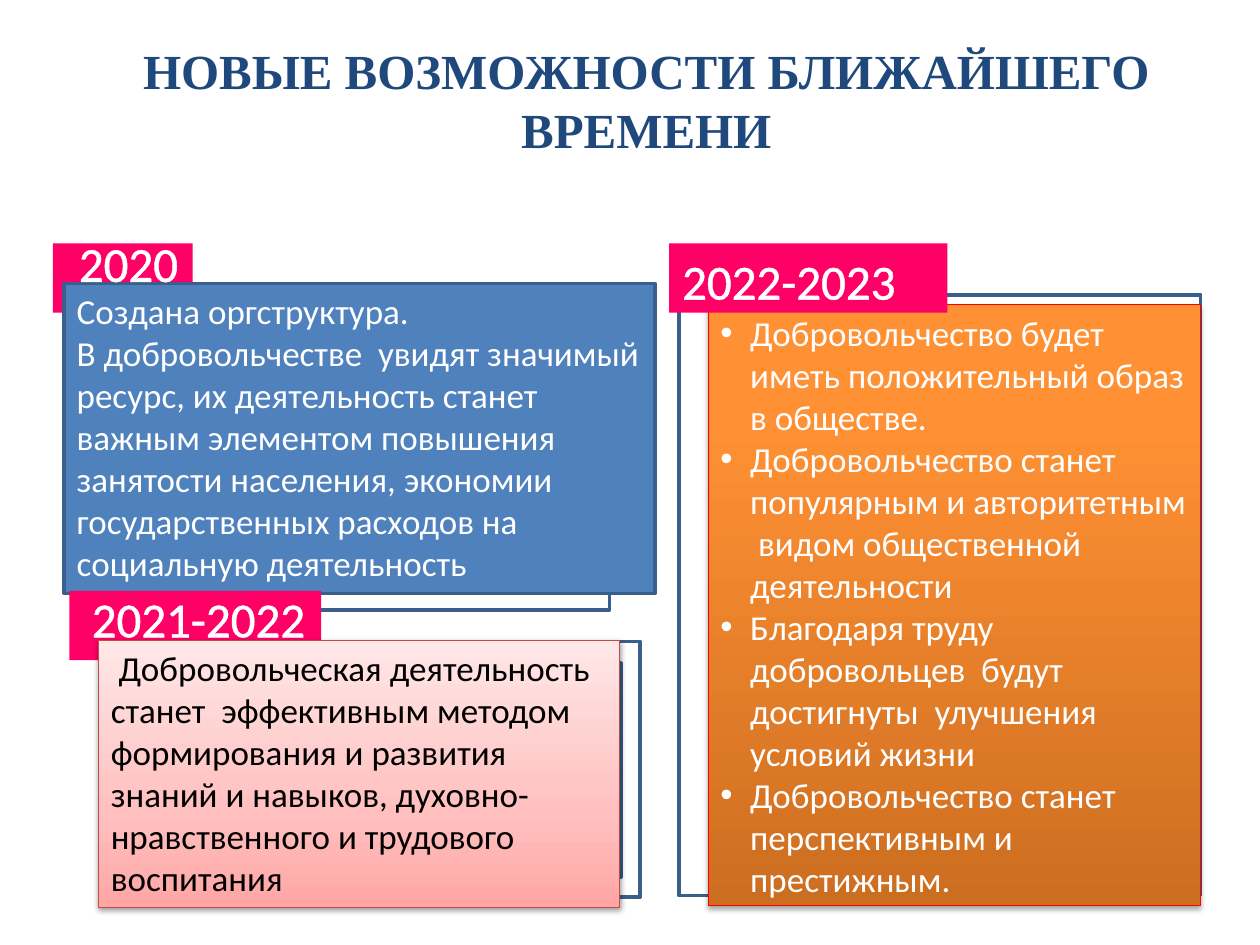
from copy import deepcopy

from lxml.etree import SubElement
from pptx import Presentation
from pptx.dml.color import RGBColor
from pptx.enum.shapes import MSO_SHAPE as Preset
from pptx.enum.text import MSO_ANCHOR as Anchor, MSO_AUTO_SIZE as AutoSize, PP_ALIGN as Align
from pptx.oxml import parse_xml
from pptx.oxml.ns import nsdecls, qn
from pptx.util import Pt

WHITE = RGBColor(0xFF, 0xFF, 0xFF)
BLACK = RGBColor(0, 0, 0)
NAVY = RGBColor(0x1F, 0x49, 0x7D)
BLUE = RGBColor(0x4F, 0x81, 0xBD)
BLUE_EDGE = RGBColor(0x3A, 0x5F, 0x8C)
MAGENTA = RGBColor(0xFF, 0x00, 0x66)
RED = RGBColor(0xFF, 0x00, 0x00)
ROSE_EDGE = RGBColor(0xBF, 0x4C, 0x48)
ORANGE_STOPS = [(0, RGBColor(0xCC, 0x6E, 0x20)), (0.8, RGBColor(0xFF, 0x90, 0x34)),
                (1, RGBColor(0xFF, 0x91, 0x36))]
ROSE_STOPS = [(0, RGBColor(0xFF, 0xA6, 0xA5)), (0.35, RGBColor(0xFF, 0xC0, 0xBF)),
              (1, RGBColor(0xFF, 0xE7, 0xE7))]

TITLE = "НОВЫЕ ВОЗМОЖНОСТИ БЛИЖАЙШЕГО ВРЕМЕНИ"
TEXT_2020 = [
    "Создана оргструктура.",
    "В добровольчестве  увидят значимый ресурс, их деятельность станет важным элементом "
    "повышения  занятости населения, экономии государственных расходов на социальную "
    "деятельность",
]
TEXT_2021 = [
    " Добровольческая деятельность станет  эффективным методом формирования и развития  "
    "знаний и навыков, духовно-нравственного и трудового воспитания",
]
TEXT_2022 = [
    "Добровольчество будет иметь положительный образ в обществе.",
    "Добровольчество станет популярным и авторитетным  видом общественной деятельности",
    "Благодаря труду добровольцев  будут достигнуты  улучшения условий жизни",
    "Добровольчество станет перспективным и престижным.",
]


def place(box, left, top, width, height):
    """Lengths in points for a part offset inside a region's box."""
    return Pt(box[0] + left), Pt(box[1] + top), Pt(width), Pt(height)


def add_rectangle(slide, area, fill, edge=None, edge_width=2):
    shape = slide.shapes.add_shape(Preset.RECTANGLE, *area)
    shape.shadow.inherit = False
    if isinstance(fill, list):
        set_gradient(shape, fill)
    else:
        shape.fill.solid()
        shape.fill.fore_color.rgb = fill
    if edge is None:
        shape.line.fill.background()
    else:
        shape.line.color.rgb = edge
        shape.line.width = Pt(edge_width)
    return shape


def set_gradient(shape, stops):
    """Three stops running from the bottom edge to the top."""
    shape.fill.gradient()
    shape.fill.gradient_angle = 90
    stop_list = shape._element.spPr.find(qn("a:gradFill")).find(qn("a:gsLst"))
    stop_list.append(deepcopy(stop_list[0]))
    for stop, (position, color) in zip(shape.fill.gradient_stops, stops):
        stop.position = position
        stop.color.rgb = color


def add_shadow(shape, opacity, distance):
    effects = shape._element.spPr.find(qn("a:effectLst"))
    shadow = SubElement(effects, qn("a:outerShdw"), blurRad=str(Pt(3.1)),
                        dist=str(Pt(distance)), dir="5400000", rotWithShape="0")
    color = SubElement(shadow, qn("a:srgbClr"), val="000000")
    SubElement(color, qn("a:alpha"), val=str(opacity * 1000))


def set_bullet(paragraph):
    properties = paragraph._p.get_or_add_pPr()
    properties.set("marL", str(Pt(17)))
    properties.set("indent", str(-Pt(17)))
    SubElement(properties, qn("a:buFont"), typeface="Arial")
    SubElement(properties, qn("a:buChar"), char="•")


def write_card(shape, lines, color, bulleted=False):
    frame = shape.text_frame
    frame.word_wrap = True
    frame.auto_size = AutoSize.SHAPE_TO_FIT_TEXT
    frame.vertical_anchor = Anchor.TOP
    frame.text = "\n".join(lines)
    for paragraph in frame.paragraphs:
        paragraph.alignment = Align.LEFT
        if bulleted:
            set_bullet(paragraph)
        format_runs(paragraph, 20, color)


def format_runs(paragraph, size, color, name="Calibri", bold=False):
    for run in paragraph.runs:
        run.font.name = name
        run.font.size = Pt(size)
        run.font.bold = bold
        run.font.color.rgb = color


def add_centered_text(slide, area, text, color, **style):
    frame = slide.shapes.add_textbox(*area).text_frame
    frame.word_wrap = True
    frame.text = text
    paragraph = frame.paragraphs[0]
    paragraph.alignment = Align.CENTER
    format_runs(paragraph, 28, color, **style)
    return frame


def add_years(slide, area, text):
    frame = add_centered_text(slide, area, text, WHITE)
    frame.auto_size = AutoSize.SHAPE_TO_FIT_TEXT
    outline = parse_xml(f'<a:ln {nsdecls("a")} w="{Pt(1.45)}"><a:solidFill>'
                        f'<a:srgbClr val="{WHITE}"/></a:solidFill></a:ln>')
    frame.paragraphs[0].runs[0].font._element.insert(0, outline)


def add_title(slide, box):
    frame = add_centered_text(slide, place(box, 0, 0, 642.2, 77.8), TITLE, NAVY,
                              name="Times New Roman", bold=True)
    frame.vertical_anchor = Anchor.MIDDLE


def add_stage_2020(slide, box):
    # Back frame and year tag
    add_rectangle(slide, place(box, 20.2, 29.5, 298, 180), WHITE, BLUE_EDGE)
    add_rectangle(slide, place(box, 0, 0, 80, 39.6), MAGENTA)
    # Card
    card = add_rectangle(slide, place(box, 6.5, 23, 337.7, 177.1), BLUE, BLUE_EDGE)
    write_card(card, TEXT_2020, WHITE)
    add_years(slide, place(box, 1.5, -9.4, 83.5, 41), "2020")


def add_stage_2021(slide, box):
    # Back frames and year tag
    add_rectangle(slide, place(box, 28.1, 28.8, 298, 146.2), WHITE, BLUE_EDGE)
    add_rectangle(slide, place(box, 39.6, 41, 275.8, 122.4), BLUE, BLUE_EDGE)
    add_rectangle(slide, place(box, 0, 0, 144, 39.6), MAGENTA)
    add_years(slide, place(box, -2.9, -5, 153.4, 41), "2021-2022")
    # Card
    card = add_rectangle(slide, place(box, 16.6, 28.1, 298, 152.6), ROSE_STOPS, ROSE_EDGE, 0.75)
    add_shadow(card, 38, 1.6)
    write_card(card, TEXT_2021, BLACK)


def add_stage_2022(slide, box):
    # Back frame and card
    add_rectangle(slide, place(box, 5.8, 29.5, 298, 343.4), WHITE, BLUE_EDGE)
    card = add_rectangle(slide, place(box, 22.3, 35.2, 281.5, 343.4), ORANGE_STOPS, RED, 0.5)
    add_shadow(card, 35, 1.8)
    write_card(card, TEXT_2022, WHITE, bulleted=True)
    # Year tag
    add_rectangle(slide, place(box, 0, 0, 159.1, 39.6), MAGENTA)
    add_years(slide, place(box, -16.5, 0.7, 169.9, 41), "2022-2023")


def main():
    presentation = Presentation()
    presentation.slide_width, presentation.slide_height = Pt(720), Pt(540)
    slide = presentation.slides.add_slide(presentation.slide_layouts[6])
    add_title(slide, (48.2, 18))
    add_stage_2020(slide, (30.2, 139))
    add_stage_2021(slide, (39.6, 337.7))
    add_stage_2022(slide, (382.3, 139))
    presentation.save("out.pptx")


if __name__ == "__main__":
    main()
